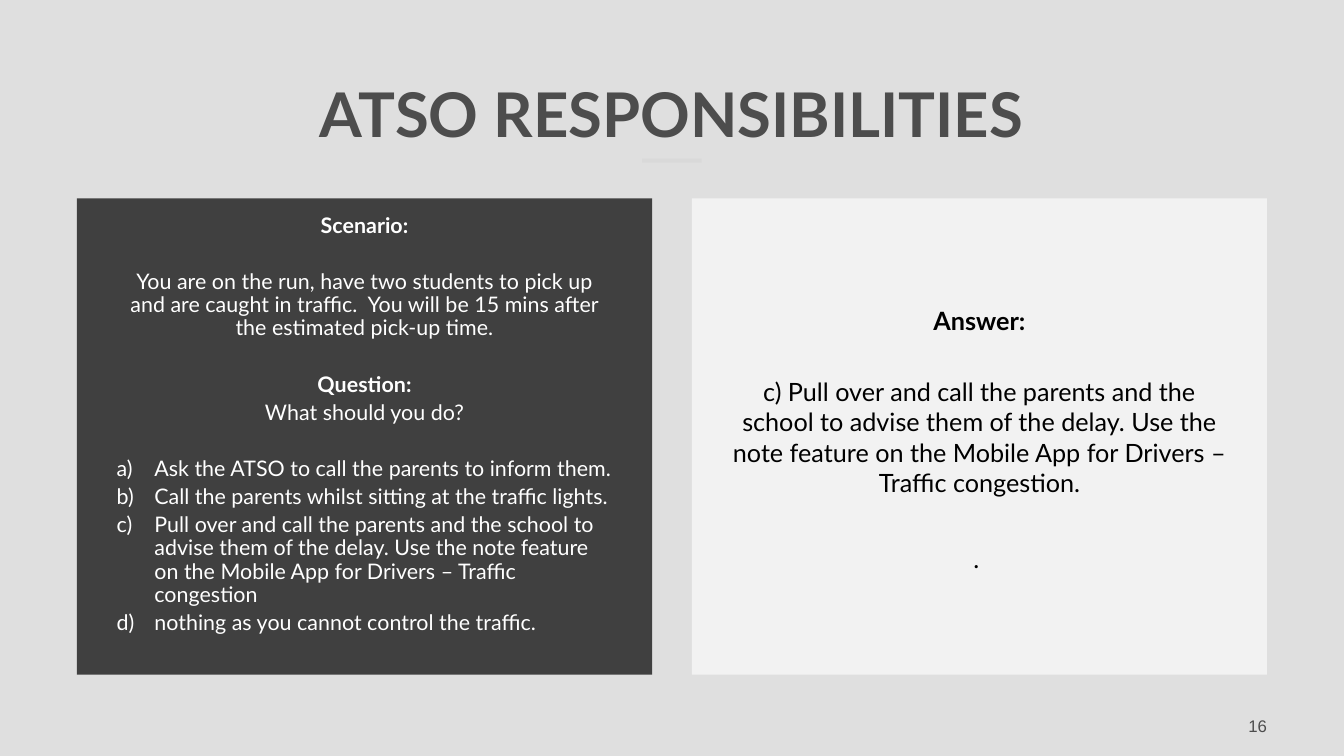
from lxml.etree import SubElement
from pptx import Presentation
from pptx.dml.color import RGBColor
from pptx.enum.shapes import MSO_SHAPE
from pptx.enum.text import MSO_ANCHOR, PP_ALIGN
from pptx.oxml.ns import qn
from pptx.util import Cm, Pt

HUES = {"page": "DFDFDF", "rule": "D9D9D9", "gray": "4D4D4D", "dark": "404040",
        "light": "F2F2F2", "white": "FFFFFF", "black": "000000"}
TITLE = "ATSO RESPONSIBILITIES"
NUMBER = "16"

# Each line: text, bold, lettered, space before in points
CASE = [
    ("Scenario:", True, False, 3.6),
    ("You are on the run, have two students to pick up and are caught in traffic.  "
     "You will be 15 mins after the estimated pick-up time.", False, False, 23.7),
    ("Question:", True, False, 23.7),
    ("What should you do?", False, False, 3.6),
    ("Ask the ATSO to call the parents to inform them.", False, True, 23.7),
    ("Call the parents whilst sitting at the traffic lights.", False, True, 3.6),
    ("Pull over and call the parents and the school to advise them of the delay. "
     "Use the note feature on the Mobile App for Drivers – Traffic congestion",
     False, True, 3.6),
    ("nothing as you cannot control the traffic.", False, True, 3.6),
]
REPLY = [
    ("Answer:", True, False, 3.6),
    ("c) Pull over and call the parents and the school to advise them of the delay. "
     "Use the note feature on the Mobile App for Drivers – Traffic congestion.",
     False, False, 29),
    (". ", False, False, 32.8),
]
# Each panel: lines, fill, ink, text size, line spacing, bottom inset in cm
PANELS = [(CASE, "dark", "white", 15.3, 0.9, 0.84),
          (REPLY, "light", "black", 18, 1.0, 0.1)]

WIDE, HIGH = 33.87, 19.05
EDGE, GAP = 1.94, 1.0
TOP, TALL = 5.0, 12.0
SPAN = WIDE - 2 * EDGE
PANEL = (SPAN - GAP) / 2


def tint(name):
    return RGBColor.from_string(HUES[name])


def write(para, text, size, ink, bold=False, face="Lato"):
    run = para.add_run()
    run.text = text
    font = run.font
    font.name, font.size, font.bold = face, Pt(size), bold
    font.color.rgb = tint(ink)


def block(slide, left, top, width, height, fill):
    shape = slide.shapes.add_shape(MSO_SHAPE.RECTANGLE, Cm(left), Cm(top),
                                   Cm(width), Cm(height))
    shape.shadow.inherit = False
    shape.fill.solid()
    shape.fill.fore_color.rgb = tint(fill)
    shape.line.fill.background()
    return shape


def letter(para):
    """Number the paragraph a), b), c) with a hanging indent."""
    props = para._p.get_or_add_pPr()
    props.set("marL", str(Cm(0.95)))
    props.set("indent", str(-Cm(0.95)))
    SubElement(props, qn("a:buFont"), typeface="+mj-lt")
    SubElement(props, qn("a:buAutoNum"), type="alphaLcParenR")


def panel(slide, left, lines, fill, ink, size, pitch, base):
    frame = block(slide, left, TOP, PANEL, TALL, fill).text_frame
    frame.word_wrap = True
    frame.vertical_anchor = MSO_ANCHOR.MIDDLE
    frame.margin_left = frame.margin_right = Cm(1)
    frame.margin_top, frame.margin_bottom = Cm(0.25), Cm(base)
    for i, (text, bold, listed, space) in enumerate(lines):
        para = frame.add_paragraph() if i else frame.paragraphs[0]
        para.alignment = PP_ALIGN.LEFT if listed else PP_ALIGN.CENTER
        para.line_spacing = pitch
        para.space_before = Pt(space)
        if listed:
            letter(para)
        write(para, text, size, ink, bold)


def main():
    deck = Presentation()
    deck.slide_width, deck.slide_height = Cm(WIDE), Cm(HIGH)
    slide = deck.slides.add_slide(deck.slide_layouts[5])
    slide.background.fill.solid()
    slide.background.fill.fore_color.rgb = tint("page")

    block(slide, (WIDE - 1.5) / 2, 4, 1.5, 0.1, "rule")

    title = slide.shapes.title
    title.left, title.top = Cm(EDGE), Cm(0.9)
    title.width, title.height = Cm(SPAN), Cm(3)
    frame = title.text_frame
    frame.word_wrap = True
    frame.vertical_anchor = MSO_ANCHOR.BOTTOM
    para = frame.paragraphs[0]
    para.alignment = PP_ALIGN.CENTER
    para.line_spacing = Pt(48.8)
    write(para, TITLE, 44, "gray", True)

    for i, spread in enumerate(PANELS):
        panel(slide, EDGE + i * (PANEL + GAP), *spread)

    box = slide.shapes.add_textbox(Cm(WIDE - EDGE - 3), Cm(17.8), Cm(3), Cm(1))
    frame = box.text_frame
    frame.word_wrap = True
    frame.vertical_anchor = MSO_ANCHOR.MIDDLE
    frame.margin_right = 0
    para = frame.paragraphs[0]
    para.alignment = PP_ALIGN.RIGHT
    write(para, NUMBER, 12, "gray", face="Arial")

    deck.save("out.pptx")


if __name__ == "__main__":
    main()
